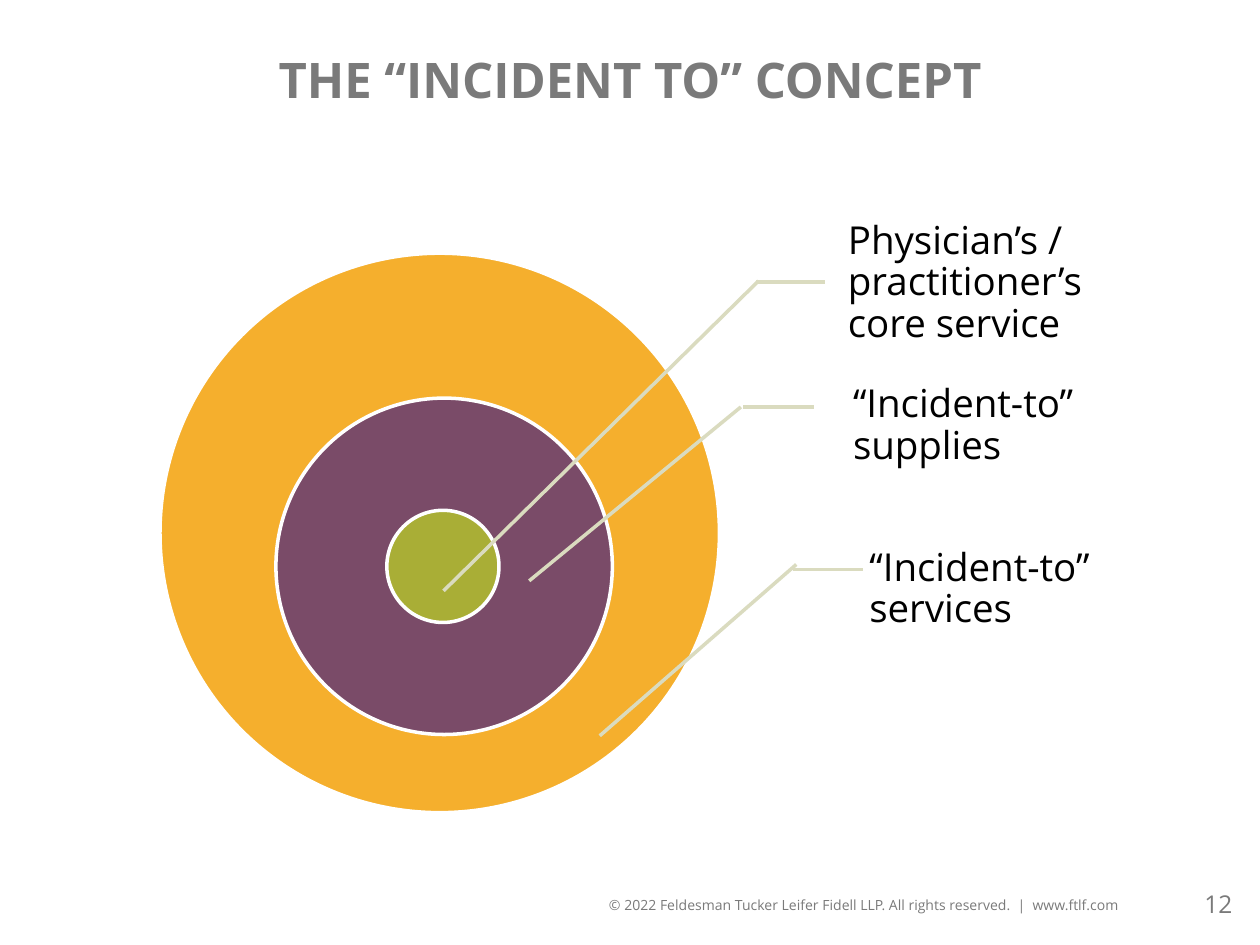
from pptx import Presentation
from pptx.dml.color import RGBColor
from pptx.enum.shapes import MSO_CONNECTOR as Link, MSO_SHAPE as Shape
from pptx.enum.text import MSO_ANCHOR as Anchor, MSO_AUTO_SIZE as Fit, PP_ALIGN as Align
from pptx.oxml.ns import qn
from pptx.util import Inches, Pt
from lxml.etree import SubElement

HUES = {"gray": "7A7A7A", "gold": "F5AF2D", "plum": "7A4B68", "green": "A9AE36",
        "lead": "DADBBF", "white": "FFFFFF", "black": "000000"}

# left, top, diameter, colour; outermost first
RINGS = [(1.27, 2.01, 4.44, "gold"), (2.19, 3.16, 2.67, "plum"), (3.07, 4.05, 0.89, "green")]

# text, box left and top, then the flat and the slanted leader line
LABELS = [
    ("Physician’s / practitioner’s core service", (6.56, 1.6),
     (6, 2.24, 6.55, 2.24), (6.02, 2.23, 3.52, 4.69)),
    ("“Incident-to” supplies", (6.6, 2.73),
     (5.9, 3.23, 6.46, 3.23), (5.88, 3.23, 4.2, 4.61)),
    ("“Incident-to” services", (6.73, 4.03),
     (6.29, 4.52, 6.85, 4.52), (6.32, 4.48, 4.76, 5.84)),
]


def hue(name):
    return RGBColor.from_string(HUES[name])


def put_text(shape, text, size, color="gray", align=Align.LEFT, bold=False,
             inset=(0.1, 0.05, 0.1, 0.05), pitch=None):
    frame = shape.text_frame
    frame.text = text
    frame.word_wrap = True
    frame.auto_size = Fit.NONE
    frame.vertical_anchor = Anchor.MIDDLE
    (frame.margin_left, frame.margin_top,
     frame.margin_right, frame.margin_bottom) = map(Inches, inset)
    para = frame.paragraphs[0]
    para.alignment = align
    if pitch:
        para.line_spacing = pitch
    font = para.runs[0].font
    font.name, font.size, font.bold = "Open Sans", Pt(size), bold
    font.color.rgb = hue(color)


def add_text(slide, text, box, **style):
    put_text(slide.shapes.add_textbox(*map(Inches, box)), text, **style)


def add_ring(slide, left, top, size, color):
    ring = slide.shapes.add_shape(Shape.OVAL, *map(Inches, (left, top, size, size)))
    ring.shadow.inherit = False
    ring.fill.solid()
    ring.fill.fore_color.rgb = hue(color)
    ring.line.color.rgb = hue("white")
    ring.line.width = Pt(2)


def add_line(slide, ends):
    line = slide.shapes.add_connector(Link.STRAIGHT, *map(Inches, ends))
    line.line.color.rgb = hue("lead")
    line.line.width = Pt(2)
    SubElement(line._element.spPr, qn("a:effectLst"))


def add_title(slide, text):
    title = slide.shapes.title
    title.left, title.top, title.width, title.height = map(Inches, (0.5, 0.17, 9, 0.91))
    put_text(title, text, size=28, align=Align.CENTER, bold=True)


def add_label(slide, text, spot, flat, slant):
    add_text(slide, text, (*spot, 2.22, 1.3), size=22, color="black",
             inset=(0.17, 0.03, 0.03, 0.03), pitch=0.9)
    add_line(slide, flat)
    add_line(slide, slant)


def main():
    deck = Presentation()
    deck.slide_width, deck.slide_height = Inches(10), Inches(7.5)
    slide = deck.slides.add_slide(deck.slide_layouts[5])
    add_text(slide, "© 2022 Feldesman Tucker Leifer Fidell LLP. All rights reserved.  |  www.ftlf.com",
             (4.4, 7.06, 4.92, 0.24), size=8, align=Align.CENTER)
    add_text(slide, "12", (9.3, 6.97, 0.58, 0.4), size=14, align=Align.RIGHT)
    add_title(slide, "THE “INCIDENT TO” CONCEPT")
    for ring in RINGS:
        add_ring(slide, *ring)
    for label in LABELS:
        add_label(slide, *label)
    deck.save("out.pptx")


if __name__ == "__main__":
    main()
